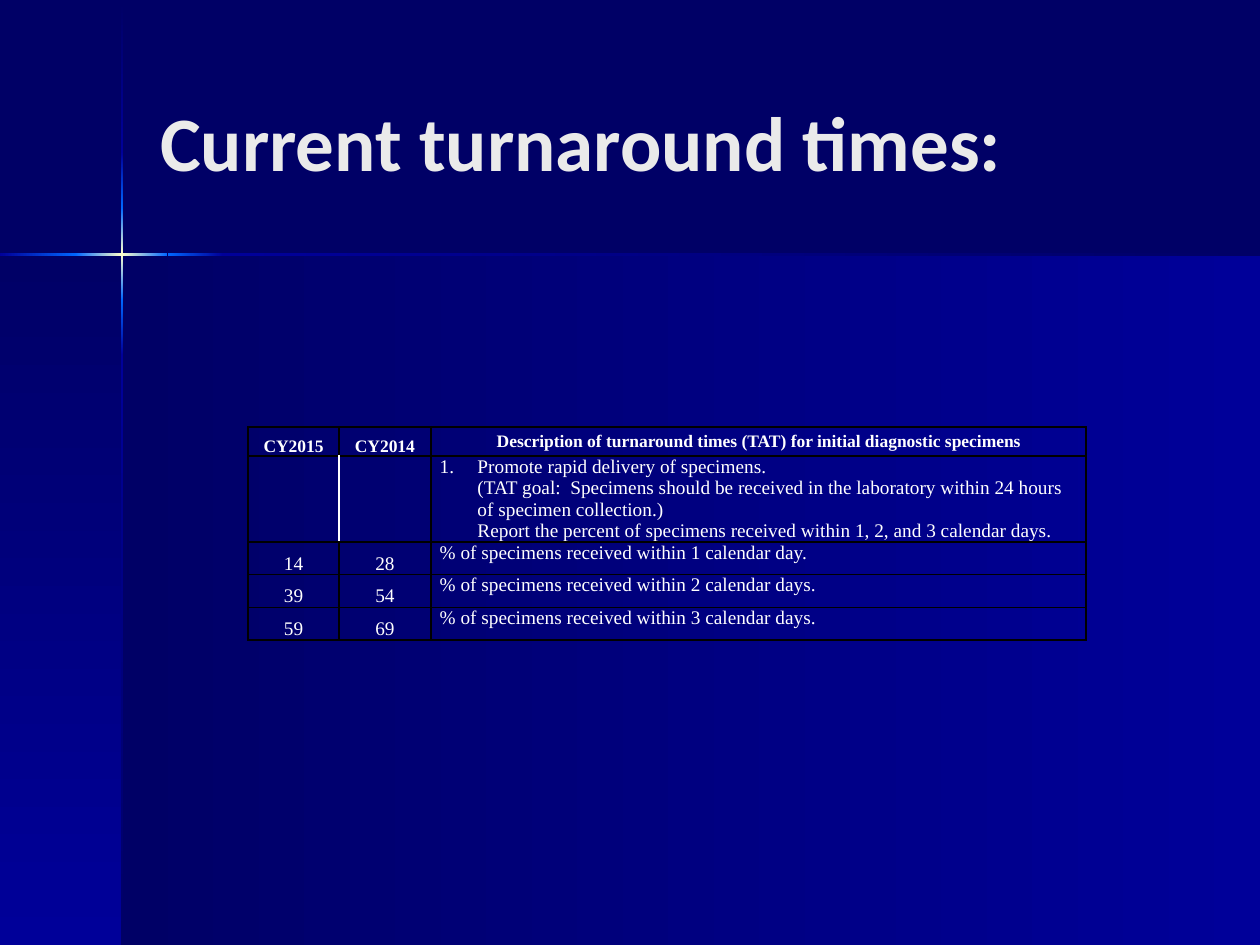
from pptx import Presentation
from pptx import util as u
from pptx.dml.color import RGBColor
from pptx.enum import shapes, text
from pptx.oxml import parse_xml
from pptx.oxml.ns import nsdecls

NAVY = RGBColor(0x00, 0x00, 0x66)
BLUE = RGBColor(0x00, 0x00, 0x99)
BRIGHT = RGBColor(0x00, 0x66, 0xFF)
GLOW = RGBColor(0xFF, 0xFF, 0xCC)
PALE = RGBColor(0xEA, 0xEA, 0xEA)
WHITE = RGBColor(0xFF, 0xFF, 0xFF)
BLACK = RGBColor(0x00, 0x00, 0x00)

TITLE_FONT = {"name": "Calibri", "size": u.Pt(44), "bold": True}
HEADER_FONT = {"name": "Times New Roman", "size": u.Pt(10), "bold": True}
BODY_FONT = {"name": "Times New Roman", "size": u.Pt(11), "bold": False}

HEADERS = ["CY2015", "CY2014",
           "Description of turnaround times (TAT) for initial diagnostic specimens"]
GOAL = [
    "1.\tPromote rapid delivery of specimens.",
    "\t(TAT goal:  Specimens should be received in the laboratory "
    "within 24 hours of specimen collection.)",
    "\tReport the percent of specimens received within 1, 2, and 3 calendar days.",
]
RATES = [
    ("14", "28", "% of specimens received within 1 calendar day."),
    ("39", "54", "% of specimens received within 2 calendar days."),
    ("59", "69", "% of specimens received within 3 calendar days."),
]


def set_all(target, values):
    for key, value in values.items():
        setattr(target, key, value)


def style_font(font, values, color):
    set_all(font, values)
    font.color.rgb = color


def add_band(slide, box, colors, angle):
    band = slide.shapes.add_shape(shapes.MSO_SHAPE.RECTANGLE, *map(u.Inches, box))
    band.shadow.inherit = False
    band.line.fill.background()
    stops = "".join(
        f'<a:gs pos="{100000 * i // (len(colors) - 1)}"><a:srgbClr val="{color}"/></a:gs>'
        for i, color in enumerate(colors))
    gradient = parse_xml(
        f'<a:gradFill {nsdecls("a")} rotWithShape="1"><a:gsLst>{stops}</a:gsLst>'
        f'<a:lin ang="{angle * 60000}" scaled="0"/></a:gradFill>')
    band._element.spPr.find("{*}prstGeom").addnext(gradient)


def add_backdrop(slide, left, top, width, height):
    cross_x, cross_y, beam = left + 0.97, top + 2.02, 0.02
    right, bottom = left + width, top + height
    add_band(slide, (cross_x, cross_y, right - cross_x, bottom - cross_y), (NAVY, BLUE), 0)
    add_band(slide, (left, cross_y, cross_x - left, bottom - cross_y), (NAVY, BLUE), 90)
    rising, falling = (BLUE, BRIGHT), (BRIGHT, BLUE)
    flare = (BRIGHT, GLOW, BRIGHT)
    vertical = [(0.01, 1.21, (NAVY, BLUE)), (2.82, height, (BLUE, NAVY)),
                (2.38, 2.82, falling), (1.21, 1.65, rising), (1.65, 2.38, flare)]
    for start, end, colors in vertical:
        add_band(slide, (cross_x - beam / 2, top + start, beam, end - start), colors, 90)
    horizontal = [(1.77, width, (BLUE, NAVY)), (0, 0.61, rising),
                  (1.33, 1.77, falling), (0.6, 1.33, flare)]
    for start, end, colors in horizontal:
        add_band(slide, (left + start, cross_y - beam / 2, end - start, beam), colors, 0)


def add_title(slide, left, top, width, height):
    title = slide.shapes.title
    slide.shapes._spTree.append(title._element)
    set_all(title, {"left": u.Inches(left), "top": u.Inches(top),
                    "width": u.Inches(width), "height": u.Inches(height)})
    frame = title.text_frame
    frame.text = "Current turnaround times:"
    set_all(frame, {"vertical_anchor": text.MSO_ANCHOR.MIDDLE, "word_wrap": True,
                    "auto_size": text.MSO_AUTO_SIZE.NONE})
    heading = frame.paragraphs[0]
    heading.alignment = text.PP_ALIGN.LEFT
    style_font(heading.runs[0].font, TITLE_FONT, PALE)


def set_borders(cell, sides):
    properties = cell._tc.get_or_add_tcPr()
    for position, side in enumerate(sides):
        properties.insert(position, parse_xml(
            f'<a:ln{side} {nsdecls("a")} w="12700"><a:solidFill>'
            f'<a:srgbClr val="{BLACK}"/></a:solidFill></a:ln{side}>'))


def fill_cell(cell, lines, font, centered=False, spacing=None, hanging=False, sides="LRTB"):
    set_all(cell, {"margin_left": u.Inches(0.07), "margin_right": u.Inches(0.07),
                   "margin_top": 0, "margin_bottom": 0,
                   "vertical_anchor": text.MSO_ANCHOR.MIDDLE if centered
                   else text.MSO_ANCHOR.TOP})
    cell.fill.background()
    set_borders(cell, sides)
    cell.text_frame.text = "\n".join(lines)
    for line in cell.text_frame.paragraphs:
        line.alignment = text.PP_ALIGN.CENTER if centered else text.PP_ALIGN.LEFT
        if spacing:
            line.line_spacing = spacing
        if hanging:
            indent = u.Inches(0.3)
            line_format = line._p.get_or_add_pPr()
            line_format.set("marL", str(indent))
            line_format.set("indent", str(-indent))
        style_font(line.font, font, WHITE)
        for run in line.runs:
            style_font(run.font, font, WHITE)


def add_turnaround_table(slide, left, top, width, height):
    row_heights = [0.23, 0.68] + [0.26] * len(RATES)
    column_widths = [0.72, 0.73, width - 1.45]
    table = slide.shapes.add_table(
        len(row_heights), len(column_widths),
        *map(u.Inches, (left, top, width, height))).table
    set_all(table, {"first_row": False, "horz_banding": False})
    for row, size in zip(table.rows, row_heights):
        row.height = u.Inches(size)
    for column, size in zip(table.columns, column_widths):
        column.width = u.Inches(size)

    for index, label in enumerate(HEADERS):
        fill_cell(table.cell(0, index), [label], HEADER_FONT, centered=True,
                  spacing=1.5 if index < 2 else None)
    fill_cell(table.cell(1, 0), [], BODY_FONT, sides="LTB")
    fill_cell(table.cell(1, 1), [], BODY_FONT, sides="RTB")
    fill_cell(table.cell(1, 2), GOAL, BODY_FONT, hanging=True)
    for row, (*percents, description) in enumerate(RATES, start=2):
        for column, percent in enumerate(percents):
            fill_cell(table.cell(row, column), [percent], BODY_FONT,
                      centered=True, spacing=1.5)
        fill_cell(table.cell(row, 2), [description], BODY_FONT)


def main():
    deck = Presentation()
    set_all(deck, {"slide_width": u.Inches(10), "slide_height": u.Inches(7.5)})
    slide = deck.slides.add_slide(deck.slide_layouts[5])
    slide.background.fill.solid()
    slide.background.fill.fore_color.rgb = NAVY
    add_backdrop(slide, 0, 0, 10, 7.5)
    add_title(slide, 1.17, 0.33, 8.25, 1.57)
    add_turnaround_table(slide, 1.97, 3.39, 6.65, 1.69)
    deck.save("out.pptx")


if __name__ == "__main__":
    main()
